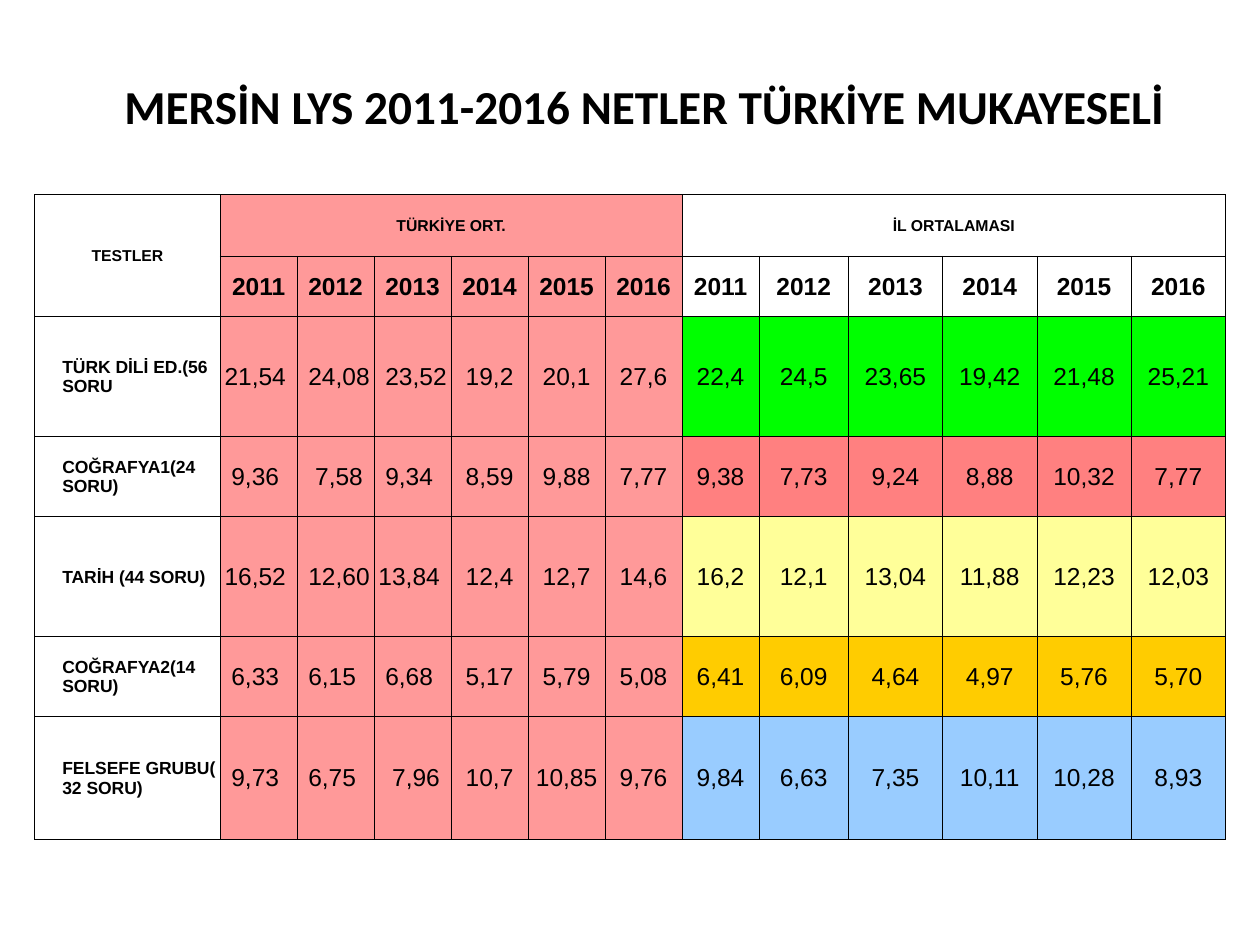
import pptx
import pptx.dml.color
import pptx.enum.text
import pptx.oxml
import pptx.oxml.ns
import pptx.util

Pt = pptx.util.Pt
RGBColor = pptx.dml.color.RGBColor
Align = pptx.enum.text.PP_ALIGN
Anchor = pptx.enum.text.MSO_ANCHOR

BLACK = RGBColor(0x00, 0x00, 0x00)
SALMON = RGBColor(0xFF, 0x99, 0x99)
GREEN = RGBColor(0x00, 0xFF, 0x00)
CORAL = RGBColor(0xFF, 0x80, 0x80)
YELLOW = RGBColor(0xFF, 0xFF, 0x99)
AMBER = RGBColor(0xFF, 0xCC, 0x00)
SKY = RGBColor(0x99, 0xCC, 0xFF)

NO_BREAK_SPACE = chr(160)
YEARS = [str(year) for year in range(2011, 2017)]
COLUMN_WIDTHS = [106] + [44] * 7 + [51] + [53.9] * 4
ROW_HEIGHTS = [35.2, 34.4, 68.5, 46.1, 68.2, 46.1, 69.8]
FIRST_TURKEY, FIRST_PROVINCE, FIRST_TEST = 1, 7, 2

TESTS = [
    ("TÜRK DİLİ ED.(56 SORU", GREEN,
     "21,54~ ~24,08 ~23,52 19,2 20,1 27,6", "22,4 24,5 23,65 19,42 21,48 25,21"),
    ("COĞRAFYA1(24 SORU)", CORAL,
     "9,36~ ~7,58 9,34~ 8,59 9,88 7,77", "9,38 7,73 9,24 8,88 10,32 7,77"),
    ("TARİH (44 SORU)", YELLOW,
     "16,52~ ~12,60 13,84~ 12,4 12,7 14,6", "16,2 12,1 13,04 11,88 12,23 12,03"),
    ("COĞRAFYA2(14 SORU)", AMBER,
     "6,33~ 6,15~ 6,68~ 5,17 5,79 5,08", "6,41 6,09 4,64 4,97 5,76 5,70"),
    ("FELSEFE GRUBU( 32 SORU)", SKY,
     "9,73~ 6,75~ ~7,96 10,7 10,85 9,76", "9,84 6,63 7,35 10,11 10,28 8,93"),
]


class SlideBuilder:
    title_font = "Calibri"
    table_font = "Arial"
    text_color = BLACK
    border_width = 0.5
    cell_margin = 0.6

    def __init__(self, slide):
        self.slide = slide

    def set_text(self, text_frame, text, font, size, bold, alignment):
        text_frame.text = text
        paragraph = text_frame.paragraphs[0]
        paragraph.alignment = alignment
        for run in paragraph.runs:
            run.font.name = font
            run.font.size = Pt(size)
            run.font.bold = bold
            run.font.color.rgb = self.text_color

    def title(self, text, left, top, width, height, size):
        shape = self.slide.shapes.add_textbox(Pt(left), Pt(top), Pt(width), Pt(height))
        shape.text_frame.word_wrap = True
        shape.text_frame.vertical_anchor = Anchor.MIDDLE
        self.set_text(shape.text_frame, text, self.title_font, size, True, Align.CENTER)

    def table(self, left, top, widths, heights):
        shape = self.slide.shapes.add_table(
            len(heights), len(widths), Pt(left), Pt(top), Pt(sum(widths)), Pt(sum(heights)))
        table = shape.table
        table.first_row = False
        table.horz_banding = False
        for column, width in zip(table.columns, widths):
            column.width = Pt(width)
        for row, height in zip(table.rows, heights):
            row.height = Pt(height)
        for cell in table.iter_cells():
            self.border(cell)
            cell.fill.background()
        return table

    def border(self, cell):
        properties = cell._tc.get_or_add_tcPr()
        for side in ("lnL", "lnR", "lnT", "lnB"):
            properties.append(pptx.oxml.parse_xml(
                f'<a:{side} {pptx.oxml.ns.nsdecls("a")} w="{Pt(self.border_width)}">'
                f'<a:solidFill><a:srgbClr val="{self.text_color}"/></a:solidFill></a:{side}>'))

    def cell(self, cell, text, size, bold=False, fill=None, alignment=Align.CENTER, indent=None):
        cell.margin_left = Pt(self.cell_margin if indent is None else indent)
        cell.margin_top = cell.margin_right = Pt(self.cell_margin)
        cell.margin_bottom = Pt(0)
        cell.vertical_anchor = Anchor.MIDDLE
        if fill is not None:
            cell.fill.solid()
            cell.fill.fore_color.rgb = fill
        self.set_text(cell.text_frame, text, self.table_font, size, bold, alignment)


def main():
    presentation = pptx.Presentation()
    presentation.slide_width = Pt(720)
    presentation.slide_height = Pt(540)
    slide = presentation.slides.add_slide(presentation.slide_layouts[6])
    builder = SlideBuilder(slide)

    builder.title("MERSİN LYS 2011-2016 NETLER TÜRKİYE MUKAYESELİ", 36.7, 37.4, 663, 45.4, 27)
    table = builder.table(19.8, 111.2, COLUMN_WIDTHS, ROW_HEIGHTS)

    table.cell(0, 0).merge(table.cell(1, 0))
    builder.cell(table.cell(0, 0), "TESTLER", 9, bold=True)
    for first, heading, fill in (
        (FIRST_TURKEY, "TÜRKİYE ORT.", SALMON),
        (FIRST_PROVINCE, "İL ORTALAMASI", None),
    ):
        table.cell(0, first).merge(table.cell(0, first + len(YEARS) - 1))
        builder.cell(table.cell(0, first), heading, 9, bold=True, fill=fill)
        for column, year in enumerate(YEARS, first):
            builder.cell(table.cell(1, column), year, 14, bold=True, fill=fill)

    for row, (name, color, turkey, province) in enumerate(TESTS, FIRST_TEST):
        builder.cell(table.cell(row, 0), name, 10, bold=True, alignment=Align.LEFT, indent=15.8)
        for first, values, fill in (
            (FIRST_TURKEY, turkey, SALMON),
            (FIRST_PROVINCE, province, color),
        ):
            for column, value in enumerate(values.split(), first):
                text = value.replace("~", NO_BREAK_SPACE)
                builder.cell(table.cell(row, column), text, 14, fill=fill)

    presentation.save("out.pptx")


if __name__ == "__main__":
    main()
